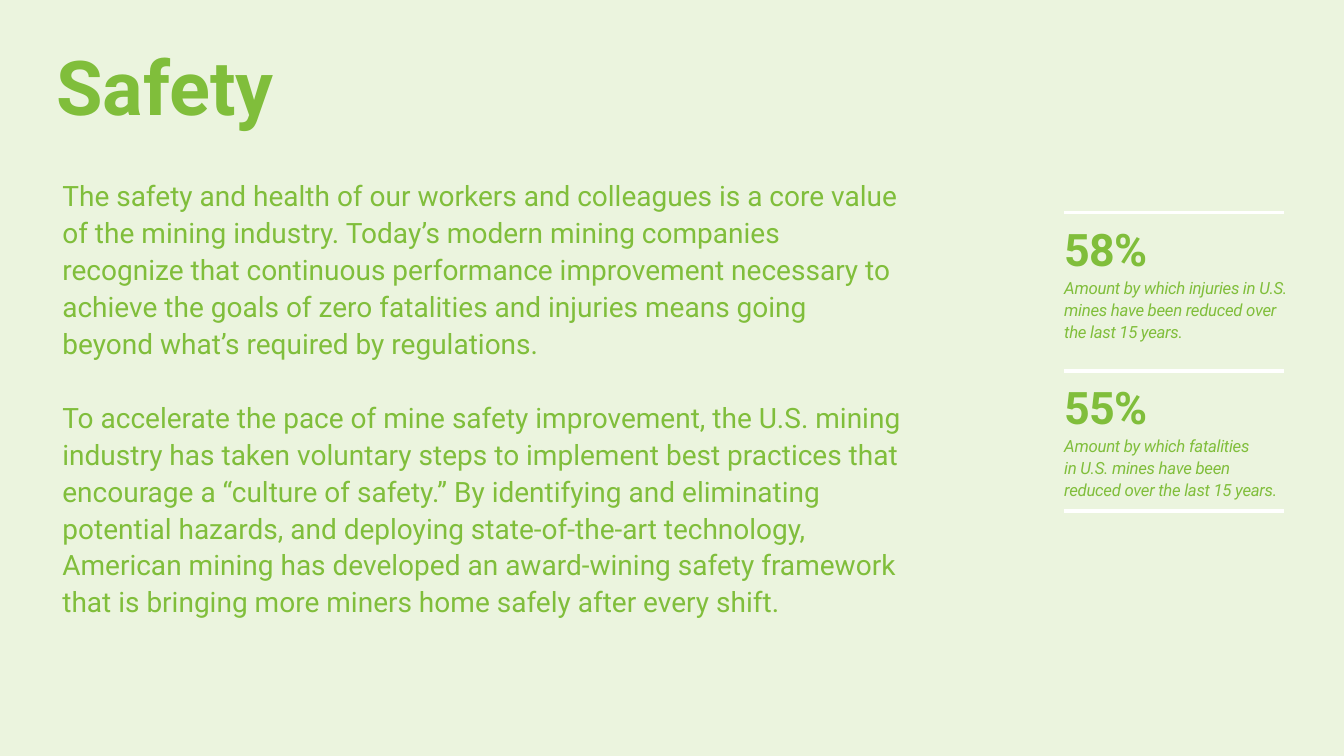
from copy import deepcopy
from dataclasses import dataclass

from pptx import Presentation
from pptx.dml.color import RGBColor
from pptx.enum.shapes import MSO_CONNECTOR, MSO_SHAPE
from pptx.enum.text import MSO_AUTO_SIZE
from pptx.oxml.ns import qn
from pptx.slide import Slide
from pptx.text.text import TextFrame
from pptx.util import Pt
from lxml import etree

RECTANGLE = MSO_SHAPE.RECTANGLE
STRAIGHT = MSO_CONNECTOR.STRAIGHT
GROW_SHAPE = MSO_AUTO_SIZE.SHAPE_TO_FIT_TEXT


@dataclass(frozen=True)
class Theme:
    font: str = "Roboto"
    green: RGBColor = RGBColor(0x80, 0xBE, 0x3B)
    pale_green: RGBColor = RGBColor(0xEB, 0xF4, 0xDE)
    white: RGBColor = RGBColor(0xFF, 0xFF, 0xFF)
    title_size: float = 54
    body_size: float = 20
    figure_size: float = 32
    caption_size: float = 12
    rule_weight: float = 2.25


@dataclass(frozen=True)
class Statistic:
    figure: str
    caption: str
    rule_top: float
    width: float


THEME = Theme()
SLIDE_WIDTH, SLIDE_HEIGHT = 960, 540
RULE_LEFT, RULE_RIGHT = 760.32, 917.28
LAST_RULE_TOP = 365.04
STATISTIC_LEFT, STATISTIC_HEIGHT, RULE_GAP = 753.12, 93.6, 2.88
BODY_GAP = 26.3

BODY = (
    "The safety and health of our workers and colleagues is a core value of the "
    "mining industry. Today’s modern mining companies recognize that continuous "
    "performance improvement necessary to achieve the goals of zero fatalities and "
    "injuries means going beyond what’s required by regulations.",
    "To accelerate the pace of mine safety improvement, the U.S. mining industry has "
    "taken voluntary steps to implement best practices that encourage a “culture of "
    "safety.” By identifying and eliminating potential hazards, and deploying "
    "state-of-the-art technology, American mining has developed an award-wining safety "
    "framework that is bringing more miners home safely after every shift.",
)
STATISTICS = (
    Statistic(
        "58%",
        "Amount by which injuries in U.S. mines have been reduced over the last 15 years.",
        151.92,
        182.88,
    ),
    Statistic(
        "55%",
        "Amount by which fatalities\nin U.S. mines have been\nreduced over the last 15 years.",
        264.96,
        189.36,
    ),
)


def add_frame(slide: Slide, left: float, top: float, width: float, height: float) -> TextFrame:
    shape = slide.shapes.add_textbox(Pt(left), Pt(top), Pt(width), Pt(height))
    frame = shape.text_frame
    frame.word_wrap = True
    frame.auto_size = GROW_SHAPE
    return frame


def add_text(
    frame: TextFrame,
    text: str,
    *,
    size: float,
    bold: bool = False,
    italic: bool = False,
    line_spacing: float = 1.0,
    space_after: float = 0,
    tracking: float = 0,
) -> None:
    paragraph = frame.paragraphs[-1]
    if paragraph.runs:
        paragraph = frame.add_paragraph()
    paragraph.text = text
    paragraph.line_spacing = line_spacing
    paragraph.space_after = Pt(space_after)
    for run in paragraph.runs:
        run.font.name = THEME.font
        run.font.size = Pt(size)
        run.font.bold = bold
        run.font.italic = italic
        run.font.color.rgb = THEME.green
        run.font._element.set("spc", str(round(tracking * 100)))
    for line_break in paragraph._p.findall(qn("a:br")):
        line_break.append(deepcopy(paragraph.runs[0].font._element))


def add_background(slide: Slide) -> None:
    shape = slide.shapes.add_shape(RECTANGLE, 0, 0, Pt(SLIDE_WIDTH), Pt(SLIDE_HEIGHT))
    shape.shadow.inherit = False
    shape.fill.solid()
    shape.fill.fore_color.rgb = THEME.pale_green
    shape.line.fill.background()


def add_rule(slide: Slide, top: float) -> None:
    rule = slide.shapes.add_connector(
        STRAIGHT, Pt(RULE_LEFT), Pt(top), Pt(RULE_RIGHT), Pt(top)
    )
    rule.line.color.rgb = THEME.white
    rule.line.width = Pt(THEME.rule_weight)
    etree.SubElement(rule._element.spPr, qn("a:effectLst"))


def add_statistic(slide: Slide, statistic: Statistic) -> None:
    add_rule(slide, statistic.rule_top)
    frame = add_frame(
        slide,
        STATISTIC_LEFT,
        statistic.rule_top + RULE_GAP,
        statistic.width,
        STATISTIC_HEIGHT,
    )
    add_text(frame, statistic.figure, size=THEME.figure_size, bold=True, tracking=-0.5)
    add_text(
        frame,
        statistic.caption,
        size=THEME.caption_size,
        italic=True,
        line_spacing=1.1,
        tracking=-0.2,
    )


def main() -> None:
    presentation = Presentation()
    presentation.slide_width = Pt(SLIDE_WIDTH)
    presentation.slide_height = Pt(SLIDE_HEIGHT)
    slide = presentation.slides.add_slide(presentation.slide_layouts[6])

    add_background(slide)
    title = add_frame(slide, 33.12, 37.44, 596.88, 61.92)
    add_text(title, "Safety", size=THEME.title_size, bold=True, line_spacing=0.8)

    body = add_frame(slide, 37.44, 121.68, 615.6, 326.88)
    for text, gap in zip(BODY, (BODY_GAP, 0)):
        add_text(body, text, size=THEME.body_size, line_spacing=1.1, space_after=gap)

    for statistic in STATISTICS:
        add_statistic(slide, statistic)
    add_rule(slide, LAST_RULE_TOP)
    presentation.save("out.pptx")


if __name__ == "__main__":
    main()
